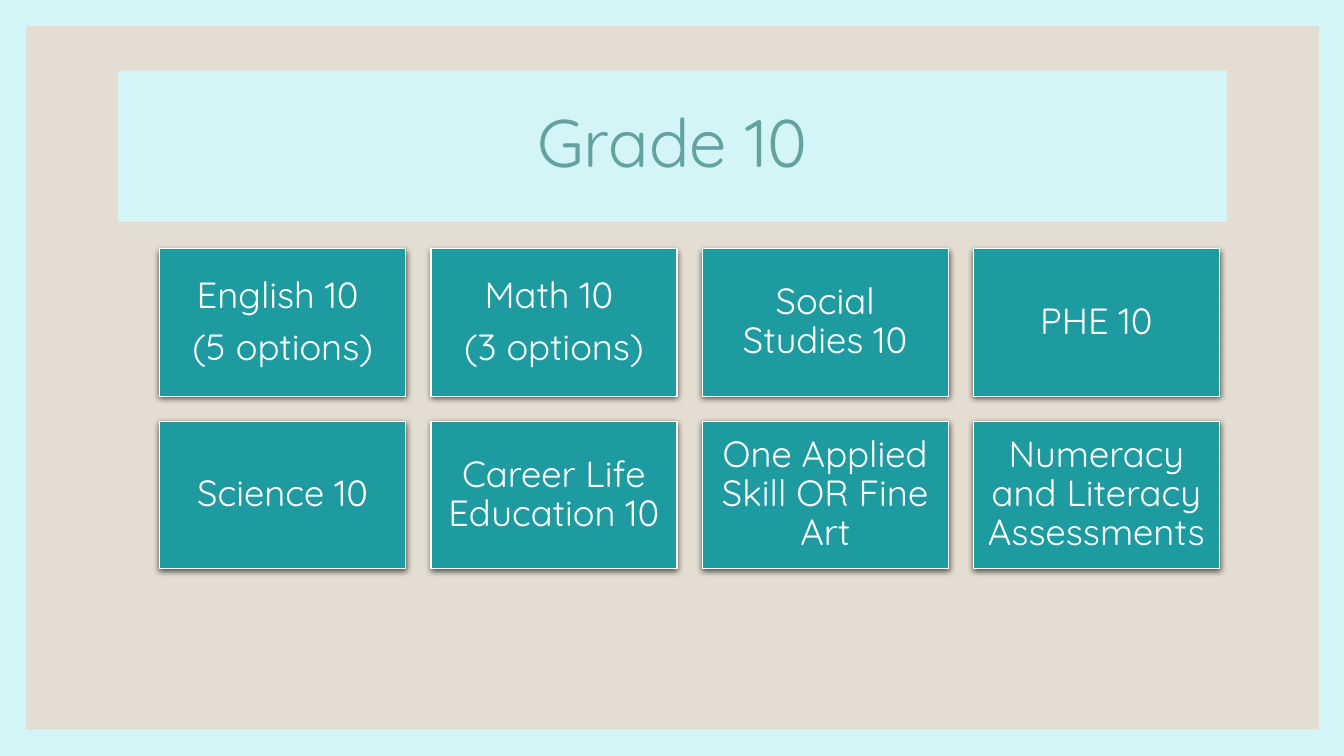
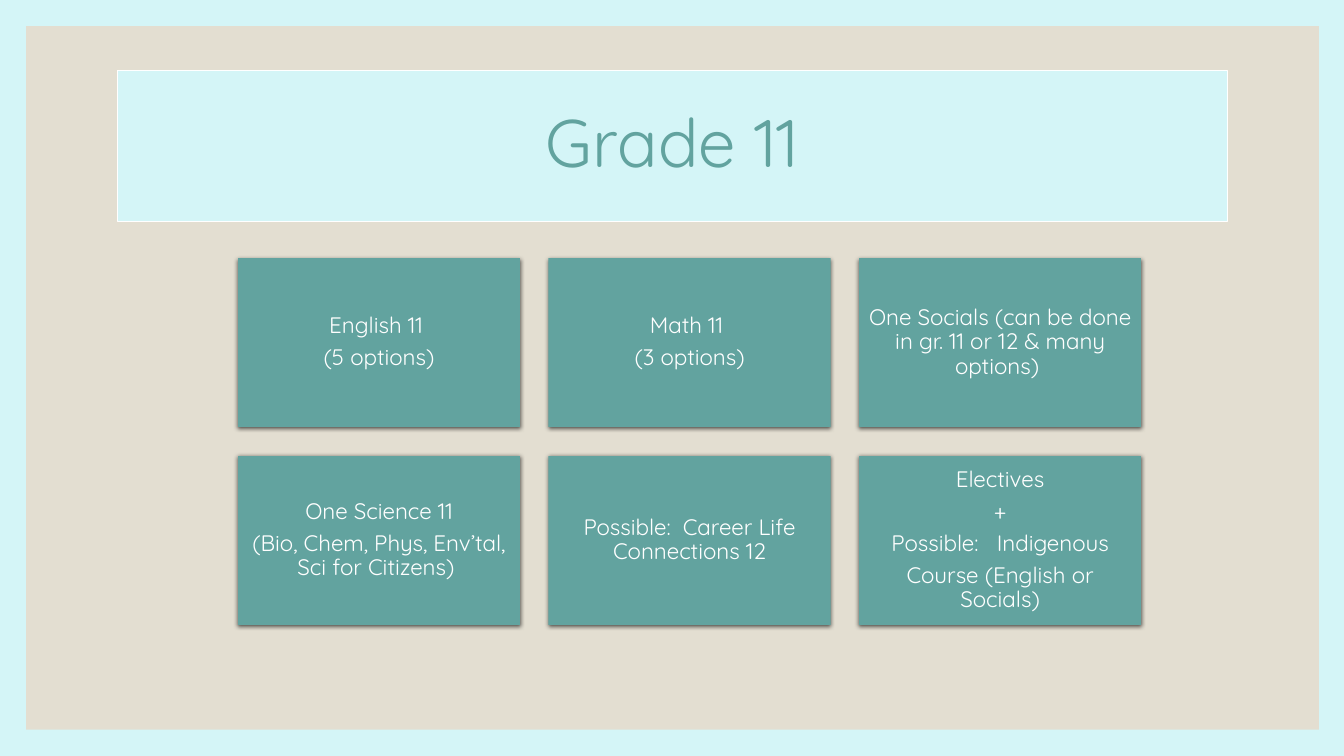
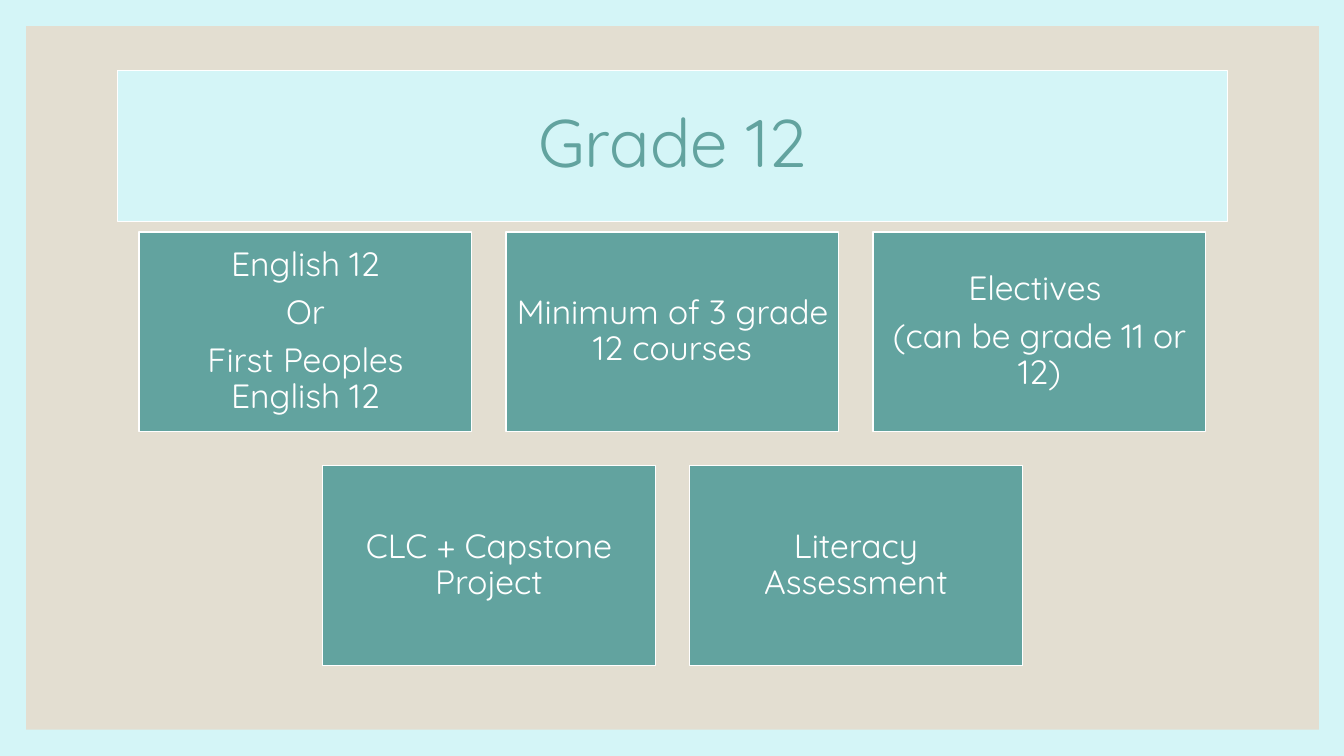
"""Build three slides of graduation requirements for grades 10 to 12."""
from dataclasses import dataclass

from lxml import etree
from pptx import Presentation
from pptx.dml.color import RGBColor
from pptx.enum.shapes import MSO_SHAPE
from pptx.enum.text import MSO_ANCHOR, PP_ALIGN
from pptx.oxml.ns import qn
from pptx.util import Inches, Pt

RECTANGLE = MSO_SHAPE.RECTANGLE
MIDDLE = MSO_ANCHOR.MIDDLE
CENTER = PP_ALIGN.CENTER
TITLE_ONLY = 5
FONT = "Quicksand"
COLORS = {
    "pale": "D4F5F7",
    "sand": "E3DED1",
    "sage": "62A39F",
    "sage_end": "60A39F",
    "teal": "1D9BA1",
    "white": "FFFFFF",
    "black": "000000",
}


@dataclass(frozen=True)
class CardStyle:
    """Look and size of the cards on one slide, lengths in inches."""
    width: float
    height: float
    gap: float
    size: int
    inset: float
    fill: str
    fill_end: str | None = None
    line: float = 0
    blur: float = 0
    distance: float = 0


@dataclass(frozen=True)
class Grade:
    """One slide: a title and centred rows of cards."""
    title: str
    title_line: float
    center: float
    top: float
    style: CardStyle
    rows: list[list[list[str]]]


GRADES = [
    Grade("Grade 10", 0, 6.84, 2.47,
          CardStyle(2.44, 1.46, 0.25, 26, 0.11, "teal", line=0.75, blur=4.5, distance=1.5),
          [[["English 10 ", "(5 options)"], ["Math 10 ", "(3 options)"],
            ["Social Studies 10"], ["PHE 10"]],
           [["Science 10"], ["Career Life Education 10"],
            ["One Applied Skill OR Fine Art"], ["Numeracy and Literacy Assessments"]]]),
    Grade("Grade 11", 0.75, 6.84, 2.56,
          CardStyle(2.8, 1.68, 0.28, 16, 0.07, "sage", fill_end="sage_end", blur=3, distance=1),
          [[["English 11 ", "(5 options)"], ["Math 11 ", "(3 options)"],
            ["One Socials (can be done in gr. 11 or 12 & many options) "]],
           [["One Science 11", "(Bio, Chem, Phys, Env’tal, Sci for Citizens) "],
            ["Possible:  Career Life Connections 12"],
            ["Electives", "+", "Possible:   Indigenous", "Course (English or Socials)"]]]),
    Grade("Grade 12", 0.75, 6.67, 2.3,
          CardStyle(3.3, 1.98, 0.34, 24, 0.1, "sage", line=1),
          [[["English 12", "Or", "First Peoples English 12"],
            ["Minimum of 3 grade 12 courses"],
            ["Electives ", "(can be grade 11 or 12)"]],
           [["CLC + Capstone Project"], ["Literacy Assessment"]]]),
]


def rgb(name: str) -> RGBColor:
    """Return a named colour."""
    return RGBColor.from_string(COLORS[name])


def write_text(shape, lines: list[str], *, size: int, color: str,
               inset: float = 0.1, after: float = 0) -> None:
    """Fill a shape with centred paragraphs."""
    frame = shape.text_frame
    frame.word_wrap = True
    frame.vertical_anchor = MIDDLE
    frame.margin_left = frame.margin_right = Inches(inset)
    frame.margin_top = frame.margin_bottom = Inches(inset)
    for index, line in enumerate(lines):
        paragraph = frame.paragraphs[0] if index == 0 else frame.add_paragraph()
        paragraph.alignment = CENTER
        paragraph.line_spacing = 0.9
        paragraph.space_before = Pt(0)
        paragraph.space_after = Pt(after)
        run = paragraph.add_run()
        run.text = line
        run.font.name = FONT
        run.font.size = Pt(size)
        run.font.color.rgb = rgb(color)


def paint(shape, fill: str, line: float = 0) -> None:
    """Set a solid fill and a white outline, or none at width zero."""
    shape.fill.solid()
    shape.fill.fore_color.rgb = rgb(fill)
    if line:
        shape.line.color.rgb = rgb("white")
        shape.line.width = Pt(line)
    else:
        shape.line.fill.background()


def add_box(slide, left: float, top: float, width: float, height: float):
    """Add a rectangle without the theme's shadow."""
    box = slide.shapes.add_shape(RECTANGLE, Inches(left), Inches(top),
                                 Inches(width), Inches(height))
    box.shadow.inherit = False
    return box


def cast_shadow(shape, blur: float, distance: float) -> None:
    """Give a shape a soft shadow straight below it."""
    effects = shape._element.spPr.find(qn("a:effectLst"))
    shadow = etree.SubElement(effects, qn("a:outerShdw"), blurRad=str(Pt(blur)),
                              dist=str(Pt(distance)), dir="5400000", rotWithShape="0")
    color = etree.SubElement(shadow, qn("a:srgbClr"), val=COLORS["black"])
    etree.SubElement(color, qn("a:alpha"), val="63000")


def add_card(slide, left: float, top: float, lines: list[str], style: CardStyle) -> None:
    """Draw one course card."""
    card = add_box(slide, left, top, style.width, style.height)
    paint(card, style.fill, style.line)
    if style.fill_end:
        card.fill.gradient()
        card.fill.gradient_angle = 270
        for stop, color in zip(card.fill.gradient_stops, (style.fill, style.fill_end)):
            stop.color.rgb = rgb(color)
    if style.blur:
        cast_shadow(card, style.blur, style.distance)
    write_text(card, lines, size=style.size, color="white",
               inset=style.inset, after=0.35 * style.size)


def add_grade(deck, grade: Grade):
    """Add a slide with its title band and rows of cards."""
    slide = deck.slides.add_slide(deck.slide_layouts[TITLE_ONLY])
    title = slide.shapes.title
    title.left, title.top = Inches(1.17), Inches(0.7)
    title.width, title.height = Inches(11), Inches(1.5)
    paint(title, "pale", grade.title_line)
    write_text(title, [grade.title], size=48, color="sage")

    style = grade.style
    pitch = style.width + style.gap
    for row, cards in enumerate(grade.rows):
        left = grade.center - (len(cards) * pitch - style.gap) / 2
        top = grade.top + row * (style.height + style.gap)
        for column, lines in enumerate(cards):
            add_card(slide, left + column * pitch, top, lines, style)
    return slide


def set_master(deck, slide) -> None:
    """Put the background and the sand panel on the master."""
    master = deck.slide_master
    master.background.fill.solid()
    master.background.fill.fore_color.rgb = rgb("pale")
    panel = add_box(slide, 0.26, 0.26, 12.82, 6.98)
    paint(panel, "sand")
    master.shapes._spTree.insert(2, panel._element)


def main() -> None:
    """Build and save the deck."""
    deck = Presentation()
    deck.slide_width, deck.slide_height = Inches(13.33), Inches(7.5)
    slides = [add_grade(deck, grade) for grade in GRADES]
    set_master(deck, slides[0])
    deck.save("out.pptx")


if __name__ == "__main__":
    main()
